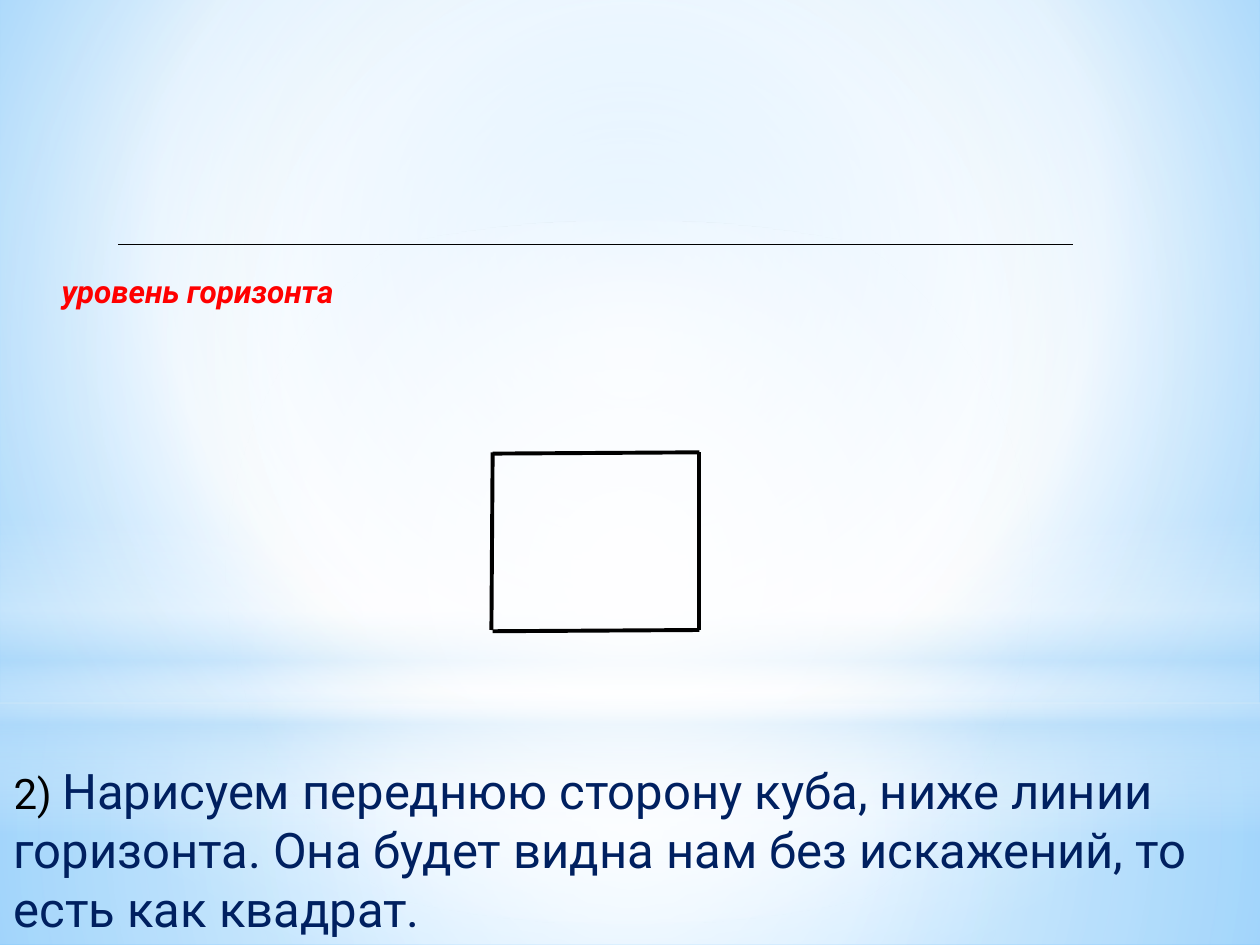
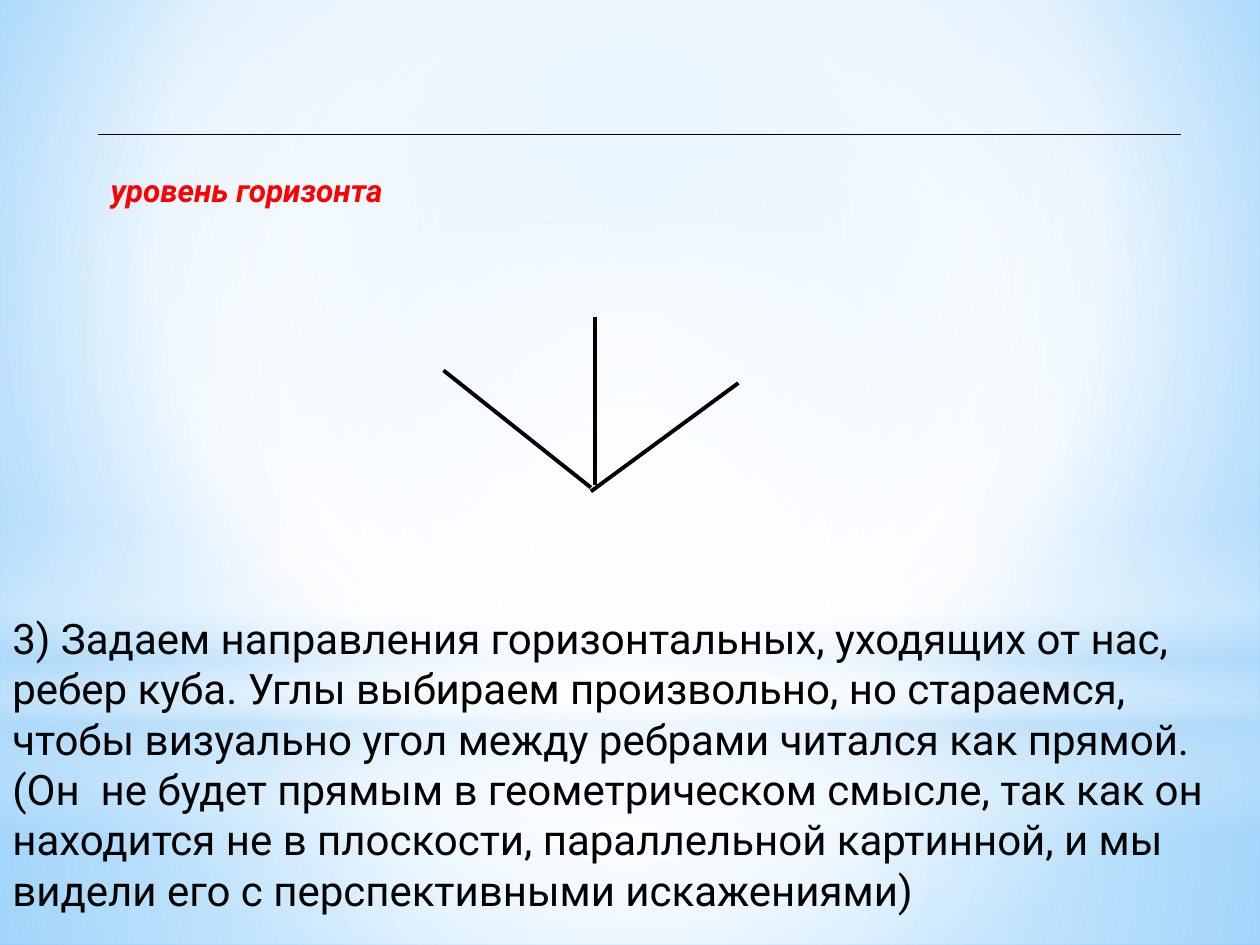
from dataclasses import dataclass

from lxml.etree import SubElement
from pptx import Presentation
from pptx.dml.color import RGBColor
from pptx.enum.shapes import MSO_CONNECTOR as Connector, MSO_SHAPE as Shape
from pptx.enum.text import MSO_AUTO_SIZE as AutoSize
from pptx.oxml.ns import qn
from pptx.util import Inches, Pt


@dataclass(frozen=True)
class Theme:
    font: str = "Roboto"
    black: str = "000000"
    red: str = "FF0000"
    navy: str = "002060"
    white: str = "FFFFFF"
    haze: str = "B4DCFA"
    sky_inner: str = "9ED5FF"
    sky_outer: str = "5BB9FF"
    label_size: int = 18
    body_size: int = 24
    accent_size: int = 28
    thin: float = 0.75
    thick: float = 2.25


THEME = Theme()
WIDTH, HEIGHT = 10, 7.5
CENTER = (50, 50, 50, 50)

# Backdrop: gradient stops are (position %, colour, opacity %)
SKY = [(0, THEME.sky_inner, 100), (60, THEME.white, 100), (100, THEME.sky_outer, 100)]
SKY_FOCUS = (20, 10, 20, 60)
BACKDROP = [
    # shape, box, stops, focus (None means a vertical gradient)
    (Shape.RECTANGLE, (0, 5.58, WIDTH, 1.92),
     [(0, THEME.white, 91), (37, THEME.white, 76), (100, THEME.haze, 79)], CENTER),
    (Shape.RECTANGLE, (0, 0, WIDTH, 5.58),
     [(0, THEME.white, 89), (48, THEME.white, 62), (100, THEME.haze, 79)], CENTER),
    (Shape.RECTANGLE, (0, 4.12, WIDTH, 2.5),
     [(0, THEME.white, 0), (29, THEME.white, 30), (45, THEME.haze, 40),
      (55, THEME.white, 26), (65, THEME.haze, 60), (100, THEME.white, 0)], None),
    (Shape.OVAL, (0, 1.75, WIDTH, 5.58),
     [(0, THEME.white, 100), (56, THEME.white, 0)], CENTER),
]

# Slide content: horizon is (left, right, y), edges are (start, end)
HORIZON_LABEL = "уровень горизонта"
SLIDES = [
    {
        "horizon": (0.94, 8.52, 1.94),
        "label_box": (0.39, 2.11, 2.7, 0.4),
        "edges": [((3.91, 3.59), (3.9, 5)), ((5.55, 5), (3.91, 5.01)),
                  ((5.55, 3.59), (5.55, 5)), ((5.55, 3.59), (3.91, 3.6))],
        "step_box": (0.01, 5.99, 9.99, 1.51),
        "step": [
            ("2) ", THEME.body_size, THEME.black),
            ("Нарисуем переднюю сторону куба, ниже линии горизонта. "
             "Она будет видна нам без искажений, то есть как квадрат.",
             THEME.accent_size, THEME.navy),
        ],
    },
    {
        "horizon": (0.78, 9.37, 1.07),
        "label_box": (0.78, 1.31, 2.6, 0.4),
        "edges": [((4.72, 2.52), (4.72, 3.85)), ((5.86, 3.04), (4.69, 3.9)),
                  ((4.69, 3.87), (3.52, 2.94))],
        "step_box": (0, 4.81, WIDTH, 2.52),
        "step": [
            ("3) Задаем направления горизонтальных, уходящих от нас, ребер куба. "
             "Углы выбираем произвольно, но стараемся, чтобы визуально угол между "
             "ребрами читался как прямой. (Он  не будет прямым в геометрическом "
             "смысле, так как он находится не в плоскости, параллельной картинной, "
             "и мы видели его с перспективными искажениями)",
             THEME.body_size, THEME.black),
        ],
    },
]


def inches(values):
    return [Inches(value) for value in values]


def set_gradient(properties, stops, focus):
    """Replace the solid fill in a properties element with a gradient."""
    solid = properties.find(qn("a:solidFill"))
    gradient = solid.makeelement(qn("a:gradFill"), {"rotWithShape": "1"})
    properties.replace(solid, gradient)
    stop_list = SubElement(gradient, qn("a:gsLst"))
    for position, color, opacity in stops:
        stop = SubElement(stop_list, qn("a:gs"), pos=str(position * 1000))
        color_element = SubElement(stop, qn("a:srgbClr"), val=color)
        if opacity < 100:
            SubElement(color_element, qn("a:alpha"), val=str(opacity * 1000))
    if focus is None:
        SubElement(gradient, qn("a:lin"), ang=str(90 * 60000), scaled="0")
    else:
        circle = SubElement(gradient, qn("a:path"), {"path": "circle"})
        sides = {side: str(value * 1000) for side, value in zip("ltrb", focus)}
        SubElement(circle, qn("a:fillToRect"), sides)


def add_backdrop(slide):
    slide.background.fill.solid()
    set_gradient(slide.element.find(".//" + qn("p:bgPr")), SKY, SKY_FOCUS)
    for kind, box, stops, focus in BACKDROP:
        shape = slide.shapes.add_shape(kind, *inches(box))
        shape.shadow.inherit = False
        shape.line.fill.background()
        shape.fill.solid()
        set_gradient(shape.element.spPr, stops, focus)


def add_line(slide, start, end, width):
    line = slide.shapes.add_connector(Connector.STRAIGHT, *inches((*start, *end)))
    line.line.color.rgb = RGBColor.from_string(THEME.black)
    line.line.width = Pt(width)
    SubElement(line.element.spPr, qn("a:effectLst"))


def add_text(slide, runs, box, wrap=True, bold=False, italic=False):
    """Add one paragraph of (text, size, colour) runs."""
    frame = slide.shapes.add_textbox(*inches(box)).text_frame
    frame.word_wrap = wrap
    frame.auto_size = AutoSize.SHAPE_TO_FIT_TEXT
    paragraph = frame.paragraphs[0]
    for text, size, color in runs:
        run = paragraph.add_run()
        run.text = text
        run.font.name = THEME.font
        run.font.size = Pt(size)
        run.font.bold = bold
        run.font.italic = italic
        run.font.color.rgb = RGBColor.from_string(color)


def main():
    presentation = Presentation()
    presentation.slide_width, presentation.slide_height = inches((WIDTH, HEIGHT))
    blank = presentation.slide_layouts[6]
    label = [(HORIZON_LABEL, THEME.label_size, THEME.red)]
    for content in SLIDES:
        slide = presentation.slides.add_slide(blank)
        add_backdrop(slide)

        # Horizon line with its label
        left, right, level = content["horizon"]
        add_line(slide, (left, level), (right, level), THEME.thin)
        add_text(slide, label, content["label_box"], wrap=False, bold=True, italic=True)

        # Cube edges and the drawing step
        for start, end in content["edges"]:
            add_line(slide, start, end, THEME.thick)
        add_text(slide, content["step"], content["step_box"])
    presentation.save("out.pptx")


if __name__ == "__main__":
    main()
